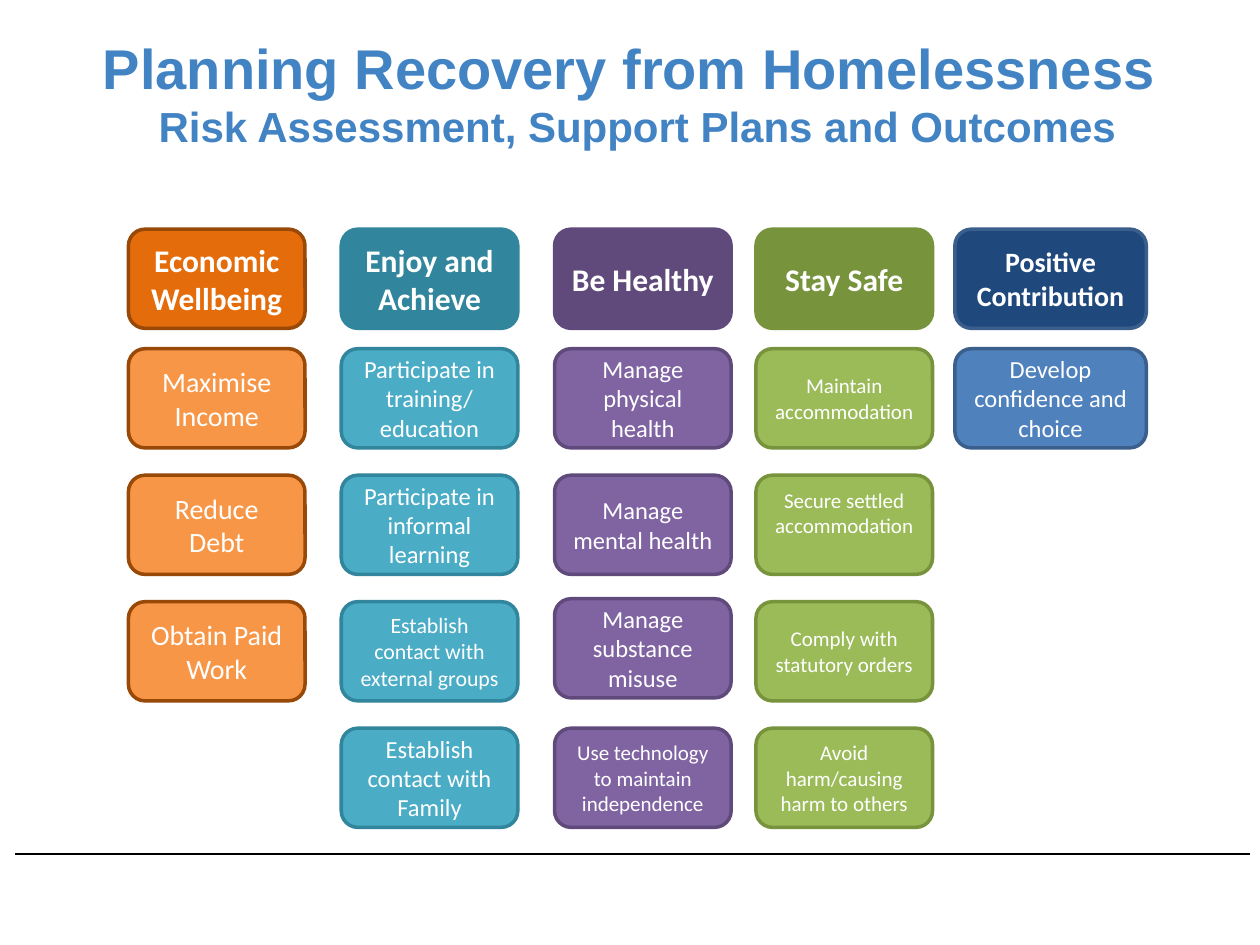
from dataclasses import dataclass

from lxml.etree import SubElement
from pptx import Presentation
from pptx.dml.color import RGBColor
from pptx.enum.shapes import MSO_CONNECTOR, MSO_SHAPE
from pptx.enum.text import MSO_ANCHOR, PP_ALIGN
from pptx.oxml.ns import qn
from pptx.slide import Slide
from pptx.text.text import TextFrame
from pptx.util import Cm, Pt

BLACK = RGBColor(0x00, 0x00, 0x00)
WHITE = RGBColor(0xFF, 0xFF, 0xFF)
TITLE_BLUE = RGBColor(0x42, 0x83, 0xC4)
ORANGE = RGBColor(0xF7, 0x96, 0x46)
DARK_ORANGE = RGBColor(0xE4, 0x6C, 0x0A)
BROWN = RGBColor(0x98, 0x48, 0x07)
TEAL = RGBColor(0x4B, 0xAC, 0xC6)
DARK_TEAL = RGBColor(0x31, 0x85, 0x9C)
PURPLE = RGBColor(0x80, 0x64, 0xA2)
DARK_PURPLE = RGBColor(0x60, 0x4A, 0x7B)
GREEN = RGBColor(0x9B, 0xBB, 0x59)
DARK_GREEN = RGBColor(0x77, 0x93, 0x3C)
BLUE = RGBColor(0x4F, 0x81, 0xBD)
NAVY = RGBColor(0x1F, 0x49, 0x7D)
STEEL_BLUE = RGBColor(0x3A, 0x5F, 0x8C)

# Lengths in centimetres
BOX_WIDTH = 3.56
BOX_HEIGHT = 2.0
HEADING_TOP = 4.62
FIRST_GOAL_TOP = 7.03
GOAL_PITCH = 2.55


@dataclass(frozen=True)
class Goal:
    text: str
    size: float
    raised: float = 0
    bottom_inset: float = 0.13


@dataclass(frozen=True)
class Outcome:
    heading: Goal
    left: float
    heading_fill: RGBColor
    goal_fill: RGBColor
    outline: RGBColor
    goals: tuple[Goal, ...]
    width: float = BOX_WIDTH


OUTCOMES = (
    Outcome(Goal("Economic Wellbeing", 18), 2.59, DARK_ORANGE, ORANGE, BROWN, (
        Goal("Maximise Income", 16),
        Goal("Reduce Debt", 16),
        Goal("Obtain Paid Work", 16),
    )),
    Outcome(Goal("Enjoy and Achieve", 18), 6.88, DARK_TEAL, TEAL, DARK_TEAL, (
        Goal("Participate in training/ education", 14),
        Goal("Participate in informal learning", 14),
        Goal("Establish contact with external groups", 12.5),
        Goal("Establish contact with Family", 14),
    )),
    Outcome(Goal("Be Healthy", 18), 11.18, DARK_PURPLE, PURPLE, DARK_PURPLE, (
        Goal("Manage physical health", 14),
        Goal("Manage mental health", 14),
        Goal("Manage substance misuse", 14, raised=0.06),
        Goal("Use technology to maintain independence", 12),
    )),
    Outcome(Goal("Stay Safe", 18), 15.24, DARK_GREEN, GREEN, DARK_GREEN, (
        Goal("Maintain accommodation", 12),
        Goal("Secure settled accommodation", 12, bottom_inset=0.63),
        Goal("Comply with statutory orders", 12),
        Goal("Avoid harm/causing harm to others", 12),
    )),
    Outcome(Goal("Positive Contribution", 16), 19.25, NAVY, BLUE, STEEL_BLUE, (
        Goal("Develop confidence and choice", 14),
    ), width=3.86),
)


def write_line(frame: TextFrame, index: int, text: str, size: float,
               font_name: str, color: RGBColor, bold: bool) -> None:
    """Write one centred paragraph; index 0 uses the frame's first paragraph."""
    paragraph = frame.paragraphs[0] if index == 0 else frame.add_paragraph()
    paragraph.alignment = PP_ALIGN.CENTER
    run = paragraph.add_run()
    run.text = text
    run.font.size = Pt(size)
    run.font.name = font_name
    run.font.color.rgb = color
    run.font.bold = bold


def add_title(slide: Slide) -> None:
    frame = slide.shapes.add_textbox(Cm(0), Cm(0), Cm(25.7), Cm(3.73)).text_frame
    frame.word_wrap = True
    frame.vertical_anchor = MSO_ANCHOR.MIDDLE
    lines = (
        ("Planning Recovery from Homelessness ", 32),
        ("Risk Assessment, Support Plans and Outcomes", 24),
    )
    for index, (text, size) in enumerate(lines):
        write_line(frame, index, text, size, "Arial", TITLE_BLUE, True)


def add_box(slide: Slide, outcome: Outcome, goal: Goal, top: float,
            fill: RGBColor, bold: bool) -> None:
    shape = slide.shapes.add_shape(
        MSO_SHAPE.ROUNDED_RECTANGLE, Cm(outcome.left), Cm(top - goal.raised),
        Cm(outcome.width), Cm(BOX_HEIGHT))
    shape.shadow.inherit = False
    shape.fill.solid()
    shape.fill.fore_color.rgb = fill
    shape.line.color.rgb = outcome.outline
    shape.line.width = Pt(2)
    frame = shape.text_frame
    frame.word_wrap = True
    frame.vertical_anchor = MSO_ANCHOR.MIDDLE
    frame.margin_bottom = Cm(goal.bottom_inset)
    write_line(frame, 0, goal.text, goal.size, "Calibri", WHITE, bold)


def add_outcome(slide: Slide, outcome: Outcome) -> None:
    """Draw one column: its heading and the goals below it."""
    add_box(slide, outcome, outcome.heading, HEADING_TOP, outcome.heading_fill, True)
    for row, goal in enumerate(outcome.goals):
        top = FIRST_GOAL_TOP + row * GOAL_PITCH
        add_box(slide, outcome, goal, top, outcome.goal_fill, False)


def add_footer_rule(slide: Slide) -> None:
    rule = slide.shapes.add_connector(
        MSO_CONNECTOR.STRAIGHT, Cm(0.3), Cm(17.22), Cm(25.2), Cm(17.22))
    rule.line.color.rgb = BLACK
    rule.line.width = Pt(1)
    SubElement(rule._element.spPr, qn("a:effectLst"))


def main() -> None:
    presentation = Presentation()
    presentation.slide_width = Cm(25.4)
    presentation.slide_height = Cm(19.05)
    slide = presentation.slides.add_slide(presentation.slide_layouts[6])
    add_footer_rule(slide)
    add_title(slide)
    for outcome in OUTCOMES:
        add_outcome(slide, outcome)
    presentation.save("out.pptx")


if __name__ == "__main__":
    main()
